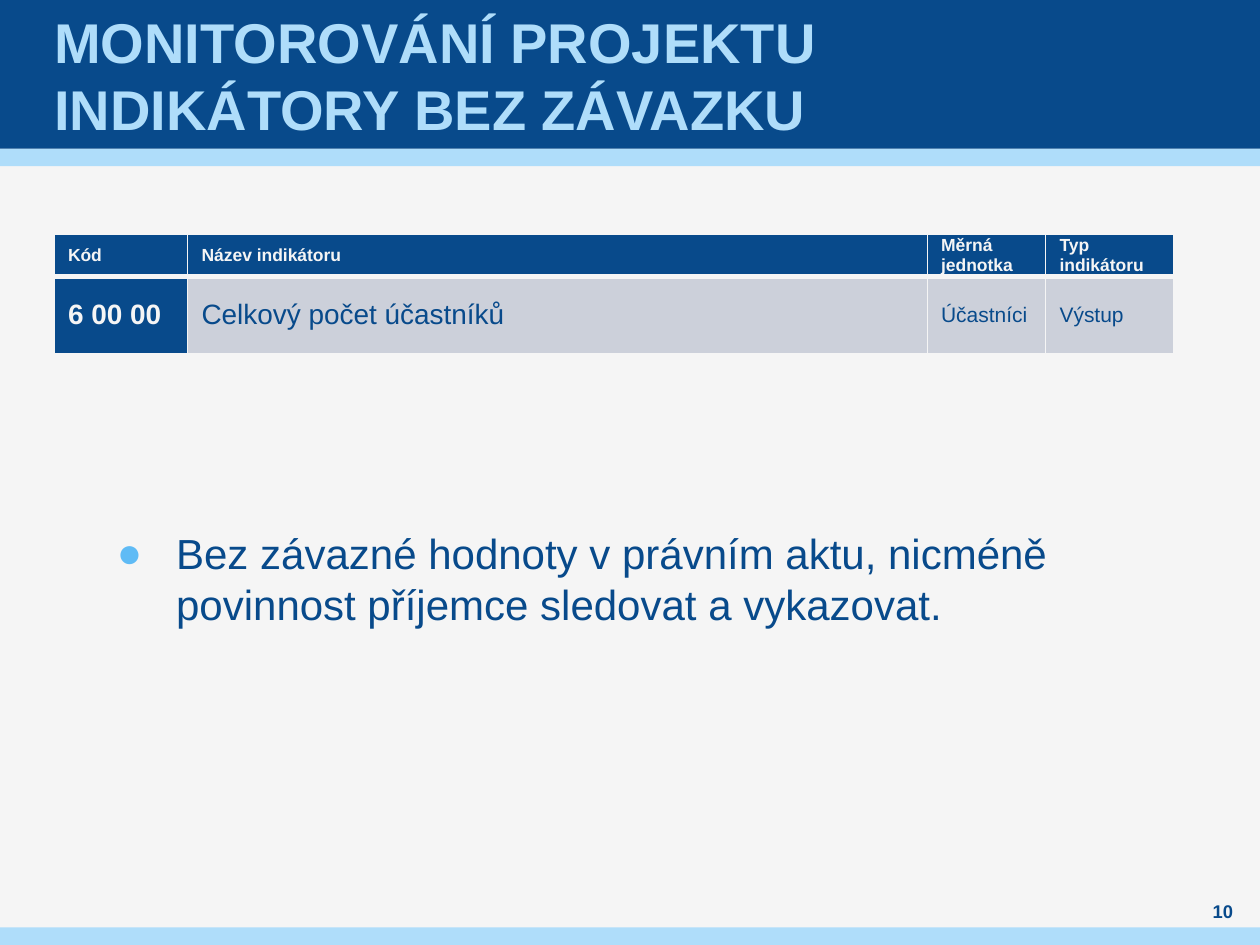
from dataclasses import dataclass

from lxml import etree
from pptx import Presentation
from pptx.dml.color import RGBColor
from pptx.enum.shapes import MSO_SHAPE
from pptx.enum.text import MSO_ANCHOR, MSO_AUTO_SIZE, PP_ALIGN
from pptx.oxml.ns import qn
from pptx.util import Emu, Inches, Pt

RECTANGLE = MSO_SHAPE.RECTANGLE
MIDDLE = MSO_ANCHOR.MIDDLE
LEFT, CENTER = PP_ALIGN.LEFT, PP_ALIGN.CENTER
FIT_SHAPE, NO_FIT = MSO_AUTO_SIZE.SHAPE_TO_FIT_TEXT, MSO_AUTO_SIZE.NONE


@dataclass(frozen=True)
class Theme:
    font: str = "Arial"
    navy: str = "084A8B"
    sky: str = "AFDDFA"
    bullet: str = "5FBBF5"
    paper: str = "F5F5F5"
    gray: str = "CCD0DA"
    title_size: float = 32
    body_size: float = 24
    name_size: float = 16
    detail_size: float = 12
    header_size: float = 10
    number_size: float = 10.5


THEME = Theme()
WIDTH, HEIGHT = 10, 7.5
HEADER_HEIGHT, STRIPE_HEIGHT = 1.18, 0.14
COLUMN_WIDTHS = (1.06, 5.87, 0.94, 1.02)
ROW_HEIGHTS = (0.31, 0.61)
ROWS = (
    ("Kód", "Název indikátoru", "Měrná jednotka", "Typ indikátoru"),
    ("6 00 00", "Celkový počet účastníků", "Účastníci", "Výstup"),
)


def set_font(paragraph, size, color, bold=False):
    font = paragraph.font
    font.name, font.size, font.bold = THEME.font, Pt(size), bold
    font.color.rgb = RGBColor.from_string(color)


def set_fill(owner, color):
    owner.fill.solid()
    owner.fill.fore_color.rgb = RGBColor.from_string(color)


def set_margins(owner, side):
    owner.margin_left = owner.margin_right = Inches(side)
    owner.margin_top = owner.margin_bottom = 0


def add_band(slide, top, height, color):
    """Add a band across the full width of the slide."""
    band = slide.shapes.add_shape(
        RECTANGLE, 0, Inches(top), Inches(WIDTH), Inches(height))
    band.shadow.inherit = False
    set_fill(band, color)
    band.line.fill.background()


def add_title(slide, text):
    title = slide.shapes.title
    title.left, title.top = Inches(0.39), Emu(0)
    title.width, title.height = Inches(9.21), Inches(HEADER_HEIGHT)
    frame = title.text_frame
    frame.text = text
    frame.word_wrap, frame.auto_size = True, NO_FIT
    frame.vertical_anchor = MIDDLE
    set_margins(frame, 0.04)
    paragraph = frame.paragraphs[0]
    paragraph.alignment = LEFT
    paragraph.line_spacing = Pt(38.4)
    set_font(paragraph, THEME.title_size, THEME.sky, bold=True)
    slide.shapes._spTree.append(title._element)  # in front of the bands


def add_text_box(slide, text, left, top, width, height):
    box = slide.shapes.add_textbox(*map(Inches, (left, top, width, height)))
    frame = box.text_frame
    frame.word_wrap = True
    frame.text = text
    return frame


def add_page_number(slide, number):
    frame = add_text_box(slide, number, 9.45, 7.13, 0.51, 0.2)
    frame.vertical_anchor = MIDDLE
    set_margins(frame, 0)
    paragraph = frame.paragraphs[0]
    paragraph.alignment = CENTER
    set_font(paragraph, THEME.number_size, THEME.navy, bold=True)


def set_bullet(paragraph, indent):
    properties = paragraph._p.get_or_add_pPr()
    properties.set("marL", str(Inches(indent)))
    properties.set("indent", str(-Inches(indent)))
    color = etree.SubElement(properties, qn("a:buClr"))
    etree.SubElement(color, qn("a:srgbClr"), val=THEME.bullet)
    etree.SubElement(properties, qn("a:buFont"), typeface=THEME.font)
    etree.SubElement(properties, qn("a:buChar"), char="●")


def add_bullet_text(slide, text):
    frame = add_text_box(slide, text, 0.83, 4.14, 8.03, 0.91)
    frame.auto_size = FIT_SHAPE
    paragraph = frame.paragraphs[0]
    set_bullet(paragraph, 0.47)
    paragraph.line_spacing = Pt(28.8)
    paragraph.space_after = Pt(6)
    set_font(paragraph, THEME.body_size, THEME.navy)


def set_borders(cell, widths):
    """Draw left, right, top and bottom borders, ahead of the cell's fill."""
    properties = cell._tc.get_or_add_tcPr()
    for position, (side, width) in enumerate(zip("LRTB", widths)):
        line = etree.Element(qn(f"a:ln{side}"), w=str(Pt(width)))
        fill = etree.SubElement(line, qn("a:solidFill"))
        etree.SubElement(fill, qn("a:srgbClr"), val=THEME.paper)
        properties.insert(position, line)


def format_cell(cell, text, row, column):
    header, strong = row == 0, row == 0 or column == 0
    cell.text = text
    cell.vertical_anchor = MIDDLE
    set_margins(cell, 0.07)
    set_fill(cell, THEME.navy if strong else THEME.gray)
    set_borders(cell, (1, 1, 1, 3) if header else (1, 1, 3, 1))
    paragraph = cell.text_frame.paragraphs[0]
    paragraph._p.get_or_add_pPr().set("marL", str(Inches(0.04)))
    paragraph.space_after = Pt(3)
    body_size = THEME.name_size if column < 2 else THEME.detail_size
    set_font(paragraph, THEME.header_size if header else body_size,
             THEME.paper if strong else THEME.navy, bold=strong)


def add_indicator_table(slide):
    table = slide.shapes.add_table(
        len(ROWS), len(COLUMN_WIDTHS), Inches(0.43), Inches(1.86),
        Inches(sum(COLUMN_WIDTHS)), Inches(sum(ROW_HEIGHTS))).table
    table.horz_banding = False
    for column, width in zip(table.columns, COLUMN_WIDTHS):
        column.width = Inches(width)
    for row, height in zip(table.rows, ROW_HEIGHTS):
        row.height = Inches(height)
    for row, texts in enumerate(ROWS):
        for column, text in enumerate(texts):
            format_cell(table.cell(row, column), text, row, column)


def main():
    presentation = Presentation()
    presentation.slide_width = Inches(WIDTH)
    presentation.slide_height = Inches(HEIGHT)
    slide = presentation.slides.add_slide(presentation.slide_layouts[5])
    set_fill(slide.background, THEME.paper)
    add_band(slide, HEADER_HEIGHT, STRIPE_HEIGHT, THEME.sky)
    add_band(slide, 0, HEADER_HEIGHT, THEME.navy)
    add_band(slide, HEIGHT - STRIPE_HEIGHT, STRIPE_HEIGHT, THEME.sky)
    add_title(slide, "MONITOROVÁNÍ PROJEKTU\vINDIKÁTORY BEZ ZÁVAZKU")
    add_page_number(slide, "10")
    add_bullet_text(slide, "Bez závazné hodnoty v právním aktu, nicméně "
                           "povinnost příjemce sledovat a vykazovat.")
    add_indicator_table(slide)
    presentation.save("out.pptx")


if __name__ == "__main__":
    main()
